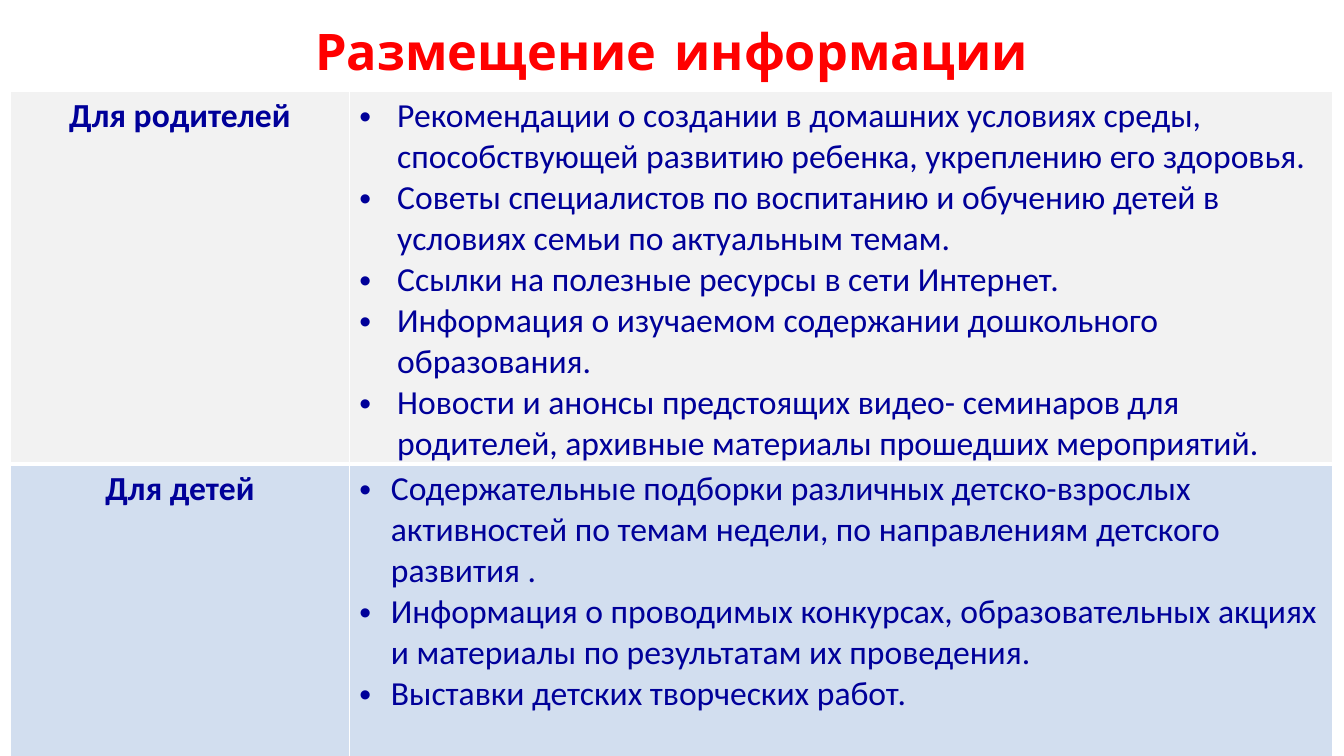
"""Build a slide with a table of information for parents and children."""
from dataclasses import dataclass

from lxml import etree
from pptx import Presentation
from pptx import util as u
from pptx.dml.color import RGBColor
from pptx.enum import text as t
from pptx.oxml import ns

HEX = {"title": "FF0000", "text": "000099", "rule": "FFFFFF",
       "grey": "F2F2F2", "blue": "D2DEEF"}


@dataclass
class Group:
    name: str
    items: list[str]
    fill: str
    high: float
    dent: float
    top: float
    base: float


GROUPS = [
    Group("Для родителей", [
        "Рекомендации о создании в домашних условиях среды, способствующей развитию ребенка, укреплению его здоровья.",
        "Советы специалистов по воспитанию и обучению детей в условиях семьи по актуальным темам.",
        "Ссылки на полезные ресурсы в сети Интернет.",
        "Информация о изучаемом содержании дошкольного образования.",
        "Новости и анонсы предстоящих видео- семинаров для родителей, архивные материалы прошедших мероприятий.",
    ], "grey", 260, 27, 1, 3),
    Group("Для детей", [
        "Содержательные подборки различных детско-взрослых активностей по темам недели, по направлениям детского развития .",
        "Информация о проводимых конкурсах, образовательных акциях и материалы по результатам их проведения.",
        "Выставки детских творческих работ.",
    ], "blue", 211, 22.5, 3, 1),
]
WIDTHS = [242, 702.7]


def write(frame, lines: list[str], *, size: float = 24, font: str = "Calibri",
          color: str = "text", bold: bool = False, align=t.PP_ALIGN.LEFT,
          dent: float = 0, space: float = 1) -> None:
    """Fill a text frame with equally formatted paragraphs."""
    for i, line in enumerate(lines):
        para = frame.paragraphs[0] if i == 0 else frame.add_paragraph()
        para.alignment, para.line_spacing = align, space
        run = para.add_run()
        run.text = line
        run.font.size, run.font.name, run.font.bold = u.Pt(size), font, bold
        run.font.color.rgb = RGBColor.from_string(HEX[color])
        if dent:
            props = para._p.get_or_add_pPr()
            props.set("marL", str(u.Pt(dent)))
            props.set("indent", str(-u.Pt(dent)))
            etree.SubElement(props, ns.qn("a:buFont"), typeface="Arial")
            etree.SubElement(props, ns.qn("a:buChar"), char="•")


def style(cell, group: Group) -> None:
    """Give a cell its borders and fill."""
    props = cell._tc.get_or_add_tcPr()
    for side, width in zip("LRTB", (1, 1, group.top, group.base)):
        line = etree.SubElement(props, ns.qn(f"a:ln{side}"), w=str(u.Pt(width)))
        paint = etree.SubElement(line, ns.qn("a:solidFill"))
        etree.SubElement(paint, ns.qn("a:srgbClr"), val=HEX["rule"])
    cell.fill.solid()
    cell.fill.fore_color.rgb = RGBColor.from_string(HEX[group.fill])


def main() -> None:
    """Draw the title and the table, then save."""
    deck = Presentation()
    deck.slide_width, deck.slide_height = u.Pt(960), u.Pt(540)
    slide = deck.slides.add_slide(deck.slide_layouts[6])

    box = slide.shapes.add_textbox(u.Pt(66), u.Pt(-18), u.Pt(828), u.Pt(113))
    frame = box.text_frame
    frame.word_wrap, frame.vertical_anchor = True, t.MSO_ANCHOR.MIDDLE
    write(frame, ["Размещение информации"], size=36, font="Comic Neue",
          color="title", bold=True, align=t.PP_ALIGN.CENTER, space=0.9)

    table = slide.shapes.add_table(
        len(GROUPS), len(WIDTHS), u.Pt(7.5), u.Pt(65), u.Pt(sum(WIDTHS)),
        u.Pt(sum(g.high for g in GROUPS))).table
    table.first_row = table.horz_banding = False
    for col, width in zip(table.columns, WIDTHS):
        col.width = u.Pt(width)
    for row, group in zip(table.rows, GROUPS):
        row.height = u.Pt(group.high)
        head, body = row.cells
        write(head.text_frame, [group.name], bold=True, align=t.PP_ALIGN.CENTER)
        write(body.text_frame, group.items, dent=group.dent)
        for cell in (head, body):
            style(cell, group)
    deck.save("out.pptx")


if __name__ == "__main__":
    main()
